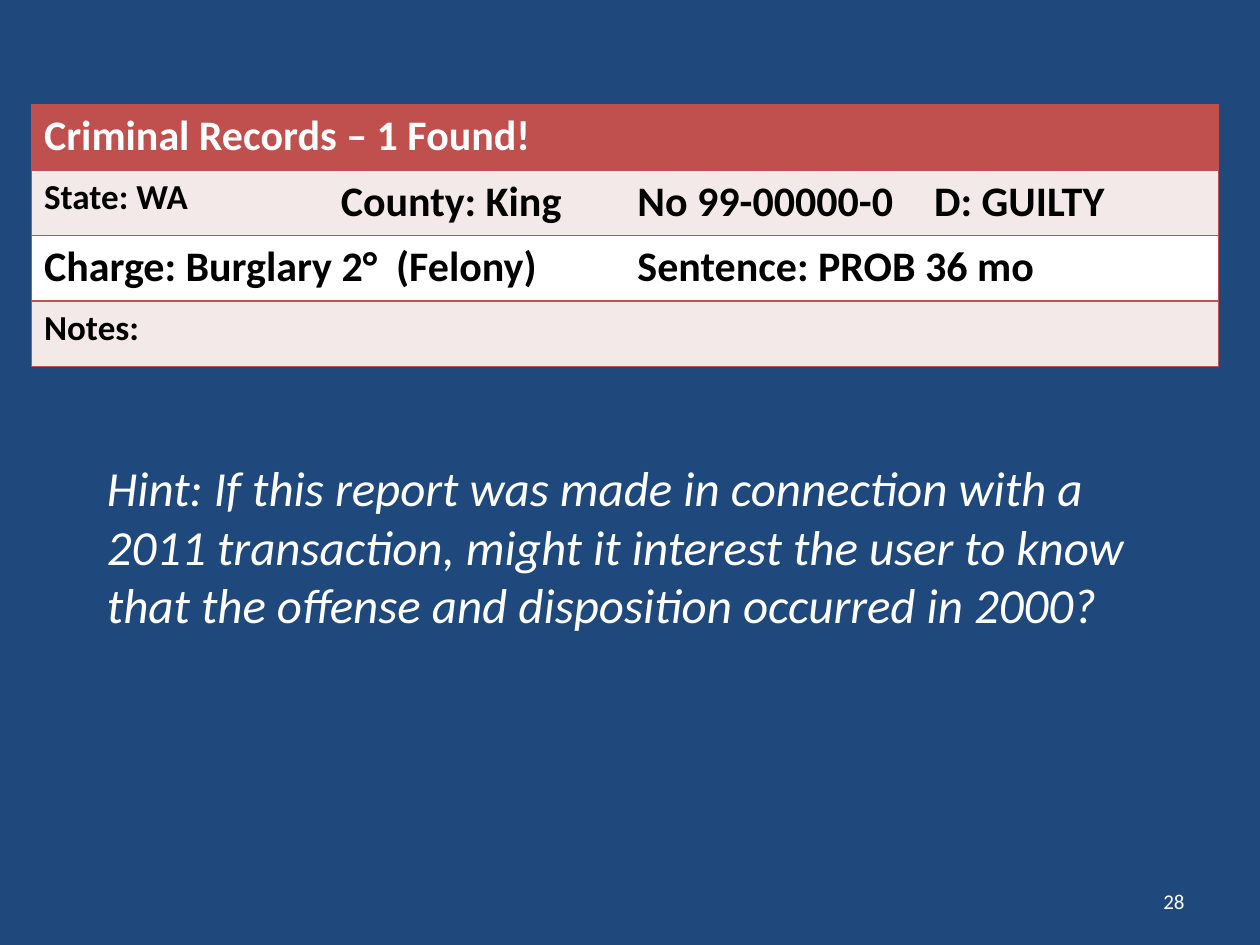
import pptx
import pptx.dml.color
import pptx.enum.text
import pptx.oxml
import pptx.oxml.ns
import pptx.util

Inches = pptx.util.Inches
Pt = pptx.util.Pt
RGBColor = pptx.dml.color.RGBColor
PP_ALIGN = pptx.enum.text.PP_ALIGN
MSO_ANCHOR = pptx.enum.text.MSO_ANCHOR

NAVY = RGBColor(0x1F, 0x49, 0x7D)
RED = RGBColor(0xC0, 0x50, 0x4D)
PINK = RGBColor(0xF4, 0xE9, 0xE9)
WHITE = RGBColor(0xFF, 0xFF, 0xFF)
BLACK = RGBColor(0x00, 0x00, 0x00)

COLUMNS = 4
# Each row: fill, text colour, cells as (text, size, column span)
RECORD_ROWS = [
    (RED, WHITE, [("Criminal Records – 1 Found!", 24, 4)]),
    (PINK, BLACK, [("State: WA", 20, 1), ("County: King", 24, 1),
                   ("No 99-00000-0", 24, 1), ("D: GUILTY", 24, 1)]),
    (WHITE, BLACK, [("Charge: Burglary 2°  (Felony)", 24, 2),
                    ("Sentence: PROB 36 mo", 24, 2)]),
    (PINK, BLACK, [("Notes:", 20, 4)]),
]
HINT = ("Hint: If this report was made in connection with a 2011 transaction, "
        "might it interest the user to know that the offense and disposition "
        "occurred in 2000?")


def write_text(tf, text, size=24, color=WHITE, bold=False, italic=False,
               align=PP_ALIGN.LEFT):
    p = tf.paragraphs[0]
    p.alignment = align
    r = p.add_run()
    r.text = text
    r.font.name = "Calibri"
    r.font.size = Pt(size)
    r.font.color.rgb = color
    r.font.bold = bold
    r.font.italic = italic


def set_borders(cell, sides):
    """Draw a red line on the given sides and none on the others."""
    tc_pr = cell._tc.get_or_add_tcPr()
    for side in "LRTB":
        paint = (f'<a:solidFill><a:srgbClr val="{RED}"/></a:solidFill>'
                 if side in sides else "<a:noFill/>")
        tc_pr.append(pptx.oxml.parse_xml(
            f'<a:ln{side} {pptx.oxml.ns.nsdecls("a")} w="{Pt(1)}">'
            f'{paint}</a:ln{side}>'))


def add_text_box(slide, box, text, anchor=MSO_ANCHOR.TOP, **style):
    tf = slide.shapes.add_textbox(*map(Inches, box)).text_frame
    tf.word_wrap = True
    tf.vertical_anchor = anchor
    write_text(tf, text, **style)


def add_record_table(slide, box):
    left, top, width, height = map(Inches, box)
    table = slide.shapes.add_table(len(RECORD_ROWS), COLUMNS,
                                   left, top, width, height).table
    for i, (fill, color, entries) in enumerate(RECORD_ROWS):
        # Lines run between rows and around the table, not between columns
        for j in range(COLUMNS):
            cell = table.cell(i, j)
            sides = "TB" + ("L" if j == 0 else "")
            sides += "R" if j == COLUMNS - 1 else ""
            set_borders(cell, sides)
            cell.fill.solid()
            cell.fill.fore_color.rgb = fill
        column = 0
        for text, size, span in entries:
            cell = table.cell(i, column)
            if span > 1:
                cell.merge(table.cell(i, column + span - 1))
                set_right = column + span == COLUMNS
                if set_right:
                    line = cell._tc.tcPr.find(pptx.oxml.ns.qn("a:lnR"))
                    outer = table.cell(i, COLUMNS - 1)._tc.tcPr.find(
                        pptx.oxml.ns.qn("a:lnR"))
                    line.replace(line[0], pptx.oxml.parse_xml(
                        f'<a:solidFill {pptx.oxml.ns.nsdecls("a")}>'
                        f'<a:srgbClr val="{RED}"/></a:solidFill>'
                    )) if outer is not None else None
            write_text(cell.text_frame, text, size=size, color=color, bold=True)
            column += span


def main():
    prs = pptx.Presentation()
    prs.slide_width, prs.slide_height = Inches(10), Inches(7.5)
    slide = prs.slides.add_slide(prs.slide_layouts[6])
    slide.background.fill.solid()
    slide.background.fill.fore_color.rgb = NAVY

    # Slide number, criminal record and hint
    add_text_box(slide, (7.17, 6.95, 2.33, 0.4), "28", size=12,
                 anchor=MSO_ANCHOR.MIDDLE, align=PP_ALIGN.RIGHT)
    add_record_table(slide, (0.25, 0.83, 9.42, 2.08))
    add_text_box(slide, (0.75, 3.58, 8.42, 1.51), HINT, size=28, italic=True)

    prs.save("out.pptx")


if __name__ == "__main__":
    main()
